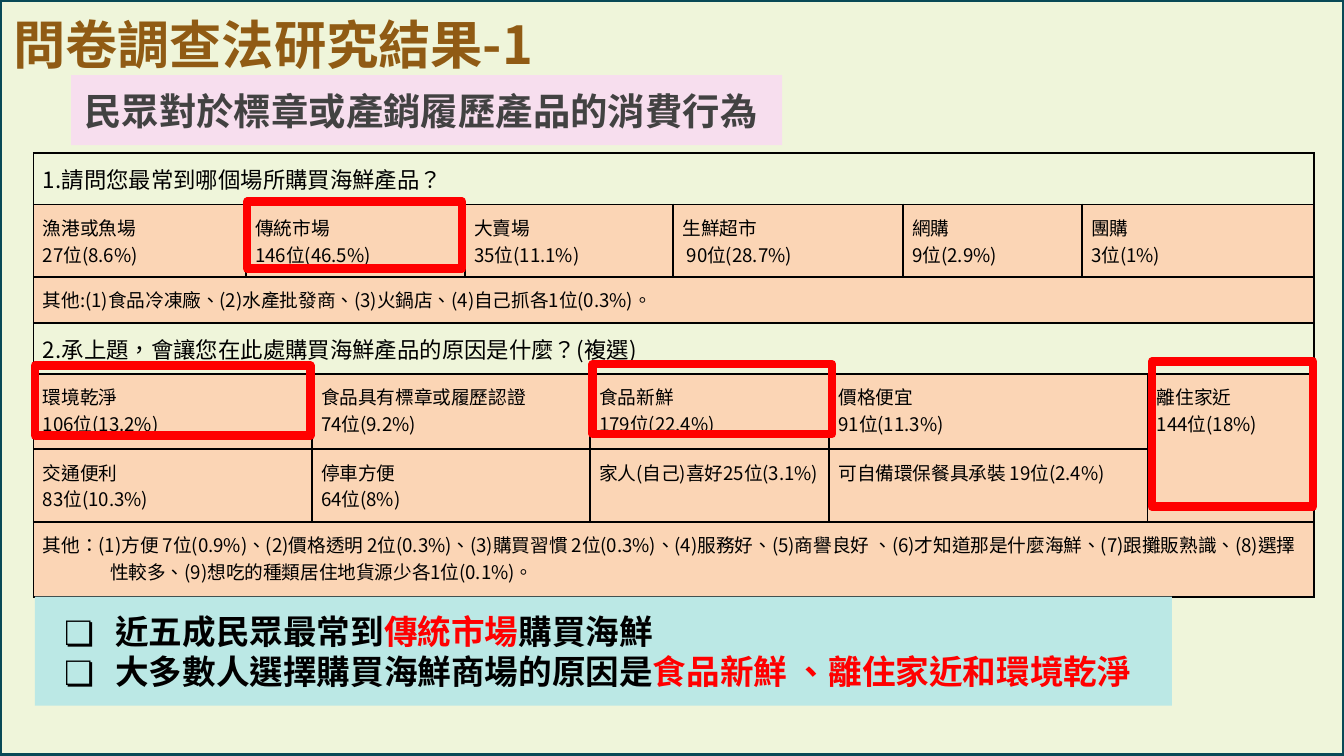
from dataclasses import dataclass

import pptx
import pptx.dml.color
import pptx.enum.shapes
import pptx.enum.text
import pptx.oxml.ns
import pptx.util
from lxml import etree

Inches = pptx.util.Inches
Pt = pptx.util.Pt
MIDDLE = pptx.enum.text.MSO_ANCHOR.MIDDLE
SANS_SC = "Noto Sans CJK SC"
SANS_TC = "Noto Sans CJK TC"
PEACH = "FBD5B5"
RED = "FF0000"
BLACK = "000000"
SLIDE_WIDTH = Inches(10)
SLIDE_HEIGHT = SLIDE_WIDTH * 9 // 16


@dataclass(frozen=True)
class Box:
    left: float
    top: float
    width: float
    height: float

    def lengths(self) -> tuple:
        return tuple(Inches(value) for value in (self.left, self.top, self.width, self.height))


@dataclass(frozen=True)
class Style:
    size: float
    font: str
    color: str
    bold: bool = False


@dataclass(frozen=True)
class Entry:
    text: str
    columns: int = 1
    rows: int = 1


@dataclass(frozen=True)
class Row:
    height: float
    entries: tuple
    size: int = 10
    fill: str | None = PEACH
    hanging: bool = False


COLUMN_WIDTHS = (1.58, 0.49, 1.14, 0.93, 0.62, 1.16, 0.55, 1.33, 0.49, 1.24)

SURVEY_ROWS = (
    Row(0.34, (Entry("1.請問您最常到哪個場所購買海鮮產品？", 10),), 12, None),
    Row(0.53, (
        Entry("漁港或魚場\n27位(8.6%)"),
        Entry("傳統市場\n146位(46.5%)", 2),
        Entry("大賣場\n35位(11.1%)", 2),
        Entry("生鮮超市\n 90位(28.7%)", 2),
        Entry("網購\n9位(2.9%)"),
        Entry("團購\n3位(1%)", 2),
    )),
    Row(0.34, (Entry("其他:(1)食品冷凍廠、(2)水產批發商、(3)火鍋店、(4)自己抓各1位(0.3%)。", 10),)),
    Row(0.34, (Entry("2.承上題，會讓您在此處購買海鮮產品的原因是什麼？(複選)", 10),), 12, None),
    Row(0.56, (
        Entry("環境乾淨\n106位(13.2%)", 2),
        Entry("食品具有標章或履歷認證\n74位(9.2%)", 2),
        Entry("食品新鮮\n179位(22.4%)", 2),
        Entry("價格便宜\n91位(11.3%)", 3),
        Entry("離住家近\n144位(18%)", 1, 2),
    )),
    Row(0.53, (
        Entry("交通便利\n83位(10.3%)", 2),
        Entry("停車方便\n64位(8%)", 2),
        Entry("家人(自己)喜好25位(3.1%)", 2),
        Entry("可自備環保餐具承裝 19位(2.4%)", 3),
    )),
    Row(0.56, (Entry(
        "其他：(1)方便 7位(0.9%)、(2)價格透明 2位(0.3%)、(3)購買習慣 2位(0.3%)、"
        "(4)服務好、(5)商譽良好 、(6)才知道那是什麼海鮮、(7)跟攤販熟識、"
        "(8)選擇性較多、(9)想吃的種類居住地貨源少各1位(0.1%)。", 10),), hanging=True),
)

FINDINGS = (
    (("近五成民眾最常到", BLACK), ("傳統市場", RED), ("購買海鮮", BLACK)),
    (("大多數人選擇購買海鮮商場的原因是", BLACK), ("食品新鮮 、離住家近和環境乾淨", RED)),
)

HIGHLIGHTS = (
    Box(1.84, 1.5, 1.6, 0.5),
    Box(4.41, 2.71, 1.78, 0.52),
    Box(8.57, 2.69, 1.2, 1.08),
    Box(0.26, 2.72, 2.05, 0.52),
)


def rgb(color: str) -> pptx.dml.color.RGBColor:
    return pptx.dml.color.RGBColor.from_string(color)


def set_values(target, values: dict) -> None:
    for name, value in values.items():
        setattr(target, name, value)


def add_element(parent, tag: str, **attributes):
    return etree.SubElement(parent, pptx.oxml.ns.qn(tag), attributes)


def set_fill(fill, color: str | None) -> None:
    if color is None:
        fill.background()
    else:
        fill.solid()
        fill.fore_color.rgb = rgb(color)


def set_margins(target, margin: float) -> None:
    sides = ("margin_left", "margin_top", "margin_right", "margin_bottom")
    set_values(target, dict.fromkeys(sides, Inches(margin)))


def set_indent(paragraph, left: float, first: float) -> None:
    properties = paragraph._p.get_or_add_pPr()
    properties.set("marL", str(Inches(left)))
    properties.set("indent", str(Inches(first)))


def add_run(paragraph, text: str, style: Style) -> None:
    run = paragraph.add_run()
    run.text = text
    set_values(run.font, {"size": Pt(style.size), "bold": style.bold, "name": style.font})
    run.font.color.rgb = rgb(style.color)
    properties = run._r.get_or_add_rPr()
    properties.set("lang", "zh-TW")
    add_element(properties, "a:ea", typeface=style.font)


def add_rectangle(slide, box: Box, fill: str | None, line: str | None = None, width: float = 1):
    kind = pptx.enum.shapes.MSO_SHAPE.RECTANGLE
    shape = slide.shapes.add_shape(kind, *box.lengths())
    shape.shadow.inherit = False
    set_fill(shape.fill, fill)
    set_fill(shape.line.fill, line)
    if line:
        shape.line.width = Pt(width)
    frame = shape.text_frame
    set_values(frame, {"word_wrap": True, "vertical_anchor": MIDDLE})
    set_margins(frame, 0.1)
    frame.paragraphs[0].alignment = pptx.enum.text.PP_ALIGN.LEFT
    return shape


def add_heading(slide, box: Box, text: str, style: Style, fill: str | None = None) -> None:
    shape = add_rectangle(slide, box, fill)
    add_run(shape.text_frame.paragraphs[0], text, style)


def add_borders(cell) -> None:
    properties = cell._tc.get_or_add_tcPr()
    for side in ("a:lnL", "a:lnR", "a:lnT", "a:lnB"):
        border = add_element(properties, side, w=str(Pt(1)))
        add_element(add_element(border, "a:solidFill"), "a:srgbClr", val=BLACK)


def add_survey_table(slide, box: Box) -> None:
    shape = slide.shapes.add_table(len(SURVEY_ROWS), len(COLUMN_WIDTHS), *box.lengths())
    table = shape.table
    set_values(table, {"first_row": False, "horz_banding": False})
    for column, width in zip(table.columns, COLUMN_WIDTHS):
        column.width = Inches(width)
    for row_index, row in enumerate(SURVEY_ROWS):
        table.rows[row_index].height = Inches(row.height)
        for cell in table.rows[row_index].cells:
            set_margins(cell, 0.07)
            add_borders(cell)
            set_fill(cell.fill, row.fill)
        column_index = 0
        for entry in row.entries:
            cell = table.cell(row_index, column_index)
            column_index += entry.columns
            if entry.columns > 1 or entry.rows > 1:
                cell.merge(table.cell(row_index + entry.rows - 1, column_index - 1))
            frame = cell.text_frame
            for line_index, line in enumerate(entry.text.split("\n")):
                paragraph = frame.add_paragraph() if line_index else frame.paragraphs[0]
                add_run(paragraph, line, Style(row.size, SANS_TC, BLACK))
                if row.hanging:
                    set_indent(paragraph, 0.5, -0.5)


def add_findings(slide, box: Box) -> None:
    frame = add_rectangle(slide, box, "BBE8E5").text_frame
    for index, finding in enumerate(FINDINGS):
        paragraph = frame.add_paragraph() if index else frame.paragraphs[0]
        paragraph.alignment = pptx.enum.text.PP_ALIGN.LEFT
        set_indent(paragraph, 0.5, -0.38)
        properties = paragraph._p.get_or_add_pPr()
        add_element(add_element(properties, "a:buClr"), "a:srgbClr", val=BLACK)
        add_element(properties, "a:buFont", typeface=SANS_SC)
        add_element(properties, "a:buChar", char="❏")
        for text, color in finding:
            add_run(paragraph, text, Style(18, SANS_SC, color, True))


def main() -> None:
    presentation = pptx.Presentation()
    set_values(presentation, {"slide_width": SLIDE_WIDTH, "slide_height": SLIDE_HEIGHT})
    slide = presentation.slides.add_slide(presentation.slide_layouts[6])
    add_rectangle(slide, Box(0, 0, 10, 5.62), "EFF5DA", "084956", 2)
    add_heading(slide, Box(0.53, 0.56, 5.29, 0.52), "民眾對於標章或產銷履歷產品的消費行為",
                Style(20, SANS_SC, "424242", True), "F7DEEE")
    add_survey_table(slide, Box(0.25, 1.14, 9.54, 3.21))
    add_findings(slide, Box(0.26, 4.44, 8.46, 0.81))
    add_heading(slide, Box(0, 0, 4.16, 0.65), "問卷調查法研究結果-1",
                Style(28, SANS_SC, "905B14", True))
    for box in HIGHLIGHTS:
        add_rectangle(slide, box, None, RED, 4.5)
    presentation.save("out.pptx")


if __name__ == "__main__":
    main()
